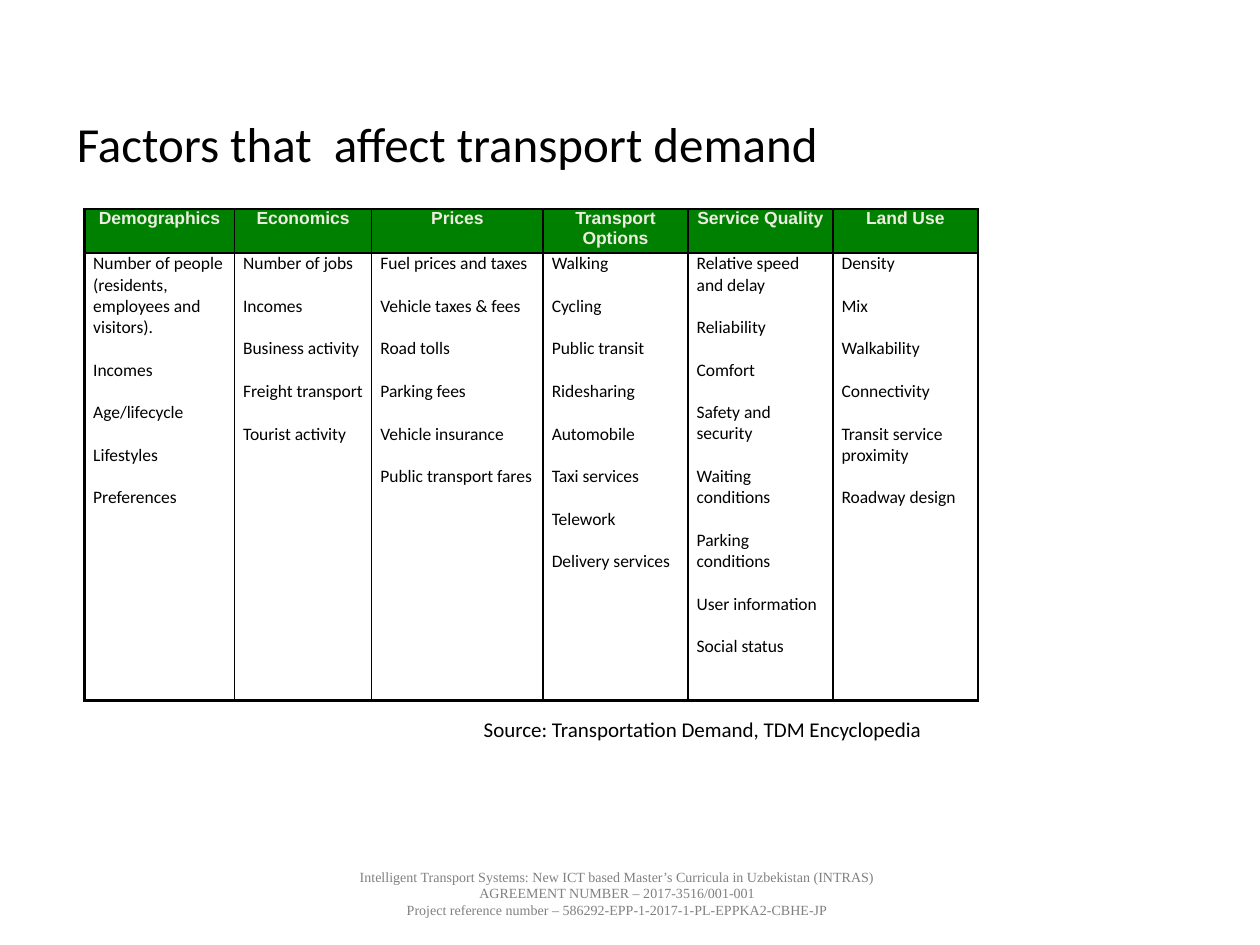
from lxml import etree
from pptx import Presentation
from pptx.dml.color import RGBColor
from pptx.enum.text import MSO_ANCHOR, PP_ALIGN
from pptx.oxml.ns import qn
from pptx.util import Inches, Pt

LEFT, CENTER, TOP = PP_ALIGN.LEFT, PP_ALIGN.CENTER, MSO_ANCHOR.TOP
BLACK = RGBColor(0x00, 0x00, 0x00)
GREEN = RGBColor(0x00, 0x80, 0x00)
CREAM = RGBColor(0xEE, 0xEC, 0xE1)
GRAY = RGBColor(0x80, 0x80, 0x80)

TITLE = "Factors that  affect transport demand"
FACTORS = [
    ("Demographics", 1.19, [
        "Number of people (residents, employees and visitors).", "Incomes",
        "Age/lifecycle", "Lifestyles", "Preferences"]),
    ("Economics", 1.09, [
        "Number of jobs", "Incomes", "Business activity",
        "Freight transport", "Tourist activity"]),
    ("Prices", 1.36, [
        "Fuel prices and taxes", "Vehicle taxes & fees", "Road tolls",
        "Parking fees", "Vehicle insurance", "Public transport fares"]),
    ("Transport Options", 1.15, [
        "Walking", "Cycling", "Public transit", "Ridesharing", "Automobile",
        "Taxi services", "Telework", "Delivery services"]),
    ("Service Quality", 1.15, [
        "Relative speed and delay", "Reliability", "Comfort",
        "Safety and security", "Waiting conditions", "Parking conditions",
        "User information", "Social status"]),
    ("Land Use", 1.15, [
        "Density", "Mix", "Walkability", "Connectivity",
        "Transit service proximity", "Roadway design"]),
]
ROW_HEIGHTS = [0.35, 3.55]
ITEM_GAP = 12.2
SOURCE = "Source: Transportation Demand, TDM Encyclopedia"
FOOTER = "\n".join([
    "Intelligent Transport Systems: New ICT based Master’s Curricula in Uzbekistan (INTRAS)",
    "AGREEMENT NUMBER – 2017-3516/001-001",
    "Project reference number – 586292-EPP-1-2017-1-PL-EPPKA2-CBHE-JP",
])


def write(p, text, size, font, color, align=LEFT, bold=False):
    p.text = text
    p.alignment = align
    for r in p.runs:
        r.font.size, r.font.name, r.font.bold = Pt(size), font, bold
        r.font.color.rgb = color


def add_text(s, box, text, size, font, color, align=LEFT):
    tf = s.shapes.add_textbox(*map(Inches, box)).text_frame
    tf.word_wrap = True
    write(tf.paragraphs[0], text, size, font, color, align)
    return tf


def add_borders(cell, widths):
    tcPr = cell._tc.get_or_add_tcPr()
    for side, width in widths.items():
        ln = etree.SubElement(tcPr, qn("a:ln" + side), w=str(Pt(width)))
        fill = etree.SubElement(ln, qn("a:solidFill"))
        etree.SubElement(fill, qn("a:srgbClr"), val=str(BLACK))


def add_factors(s):
    widths = [width for _, width, _ in FACTORS]
    table = s.shapes.add_table(
        len(ROW_HEIGHTS), len(FACTORS), Inches(0.67), Inches(1.66),
        Inches(sum(widths)), Inches(sum(ROW_HEIGHTS))).table
    table.first_row = table.horz_banding = False
    for row, height in zip(table.rows, ROW_HEIGHTS):
        row.height = Inches(height)
    last = len(FACTORS) - 1
    for i, (heading, width, items) in enumerate(FACTORS):
        table.columns[i].width = Inches(width)
        head, body = table.cell(0, i), table.cell(1, i)
        for cell in (head, body):
            cell.margin_left = cell.margin_right = Inches(0.07)
            cell.margin_top = cell.margin_bottom = 0
            cell.vertical_anchor = TOP
            add_borders(cell, {"L": 1.5 if i == 0 else 1,
                               "R": 1.5 if i == last else 1,
                               "T": 1.5, "B": 1.5})
        head.fill.solid()
        head.fill.fore_color.rgb = GREEN
        body.fill.background()
        write(head.text_frame.paragraphs[0], heading, 10, "Arial", CREAM, CENTER, True)
        tf = body.text_frame
        for j, item in enumerate(items):
            p = tf.add_paragraph() if j else tf.paragraphs[0]
            write(p, item, 10, "Calibri", BLACK)
            if j:
                p.space_before = Pt(ITEM_GAP)


def main():
    prs = Presentation()
    prs.slide_width, prs.slide_height = Inches(10), Inches(7.5)
    s = prs.slides.add_slide(prs.slide_layouts[5])

    title = s.shapes.title
    title.left, title.top, title.width, title.height = map(Inches, (0.51, 0.9, 8.62, 1.45))
    title.text_frame.vertical_anchor = TOP
    p = title.text_frame.paragraphs[0]
    write(p, TITLE, 28, "Calibri", BLACK)
    p.line_spacing = 0.9

    add_factors(s)
    add_text(s, (3.74, 5.64, 4.41, 0.3), SOURCE, 12, "Calibri", BLACK)
    tf = add_text(s, (1.35, 6.84, 7.1, 0.66), FOOTER, 8, "Times New Roman", GRAY, CENTER)
    tf.margin_left = tf.margin_right = 0
    prs.save("out.pptx")


if __name__ == "__main__":
    main()
